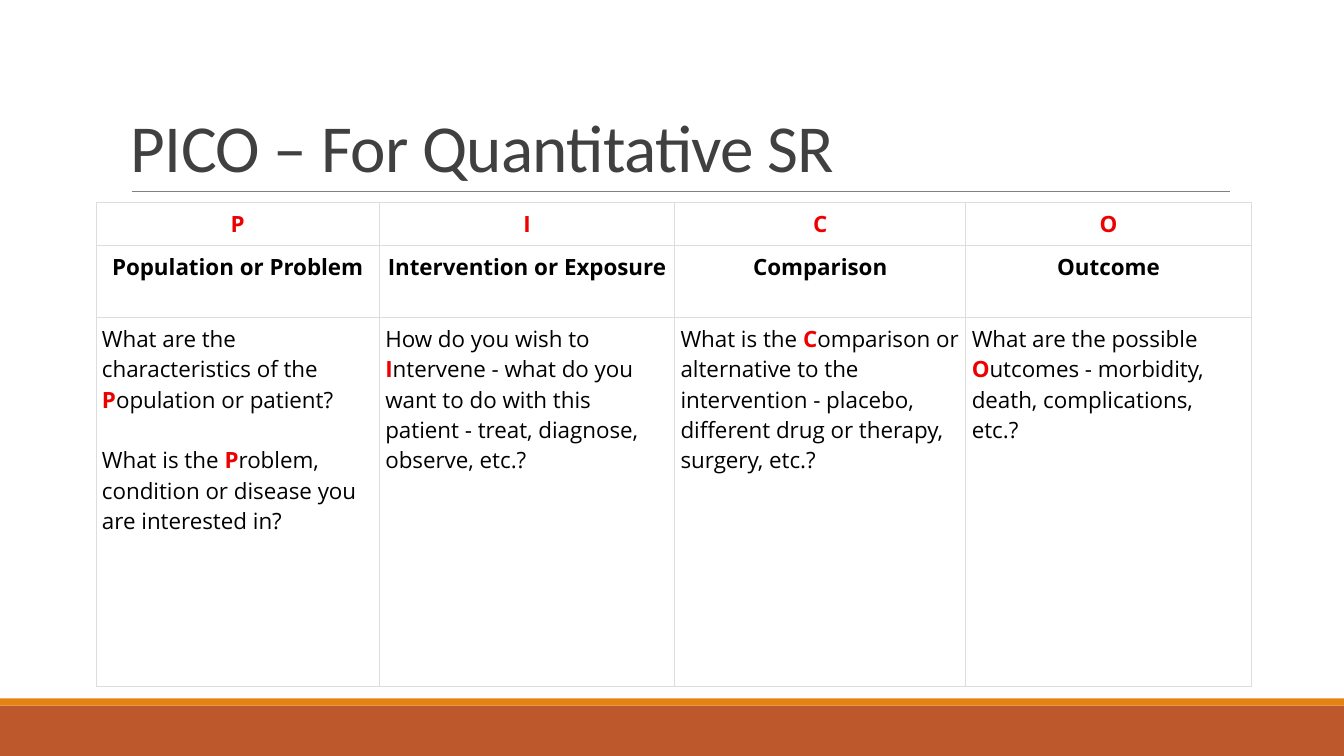
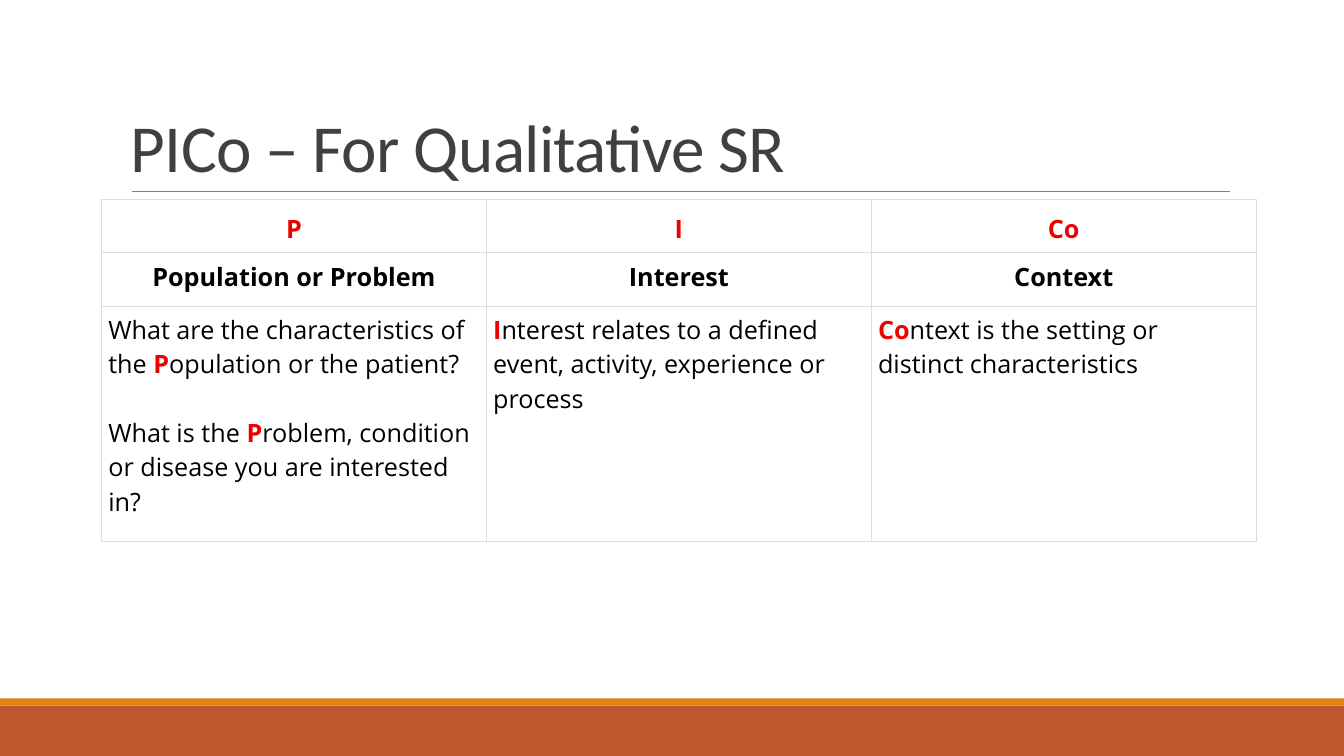
from dataclasses import dataclass
from typing import Optional

import lxml.etree
import pptx
import pptx.dml.color
import pptx.enum.shapes
import pptx.enum.text
import pptx.oxml.ns
import pptx.util

Cm = pptx.util.Cm
Pt = pptx.util.Pt
qn = pptx.oxml.ns.qn
ALIGN = pptx.enum.text.PP_ALIGN
ANCHOR = pptx.enum.text.MSO_ANCHOR

COLORS = {
    "band": "BD582C",
    "stripe": "E48312",
    "rule": "808080",
    "title": "404040",
    "text": "000000",
    "accent": "EE0000",
    "cell": "FFFFFF",
    "border": "DDDDDD",
}
TITLE_FONT = "Calibri"
TABLE_FONT = "Open Sans"
SLIDE_W, SLIDE_H = 33.87, 19.05
LINE_FACTOR = 1.36


@dataclass(frozen=True)
class Column:
    letter: str
    heading: str
    questions: tuple[str, ...]
    width: float


@dataclass(frozen=True)
class Framework:
    title: str
    left: float
    top: float
    rows: tuple[float, float, float]
    size: int
    inset: float
    columns: tuple[Column, ...]


FRAMEWORKS = (
    Framework(
        "PICO – For Quantitative SR", 2.42, 5.11, (1.07, 1.82, 9.3), 16, 0.15,
        (
            Column("P", "Population or Problem", (
                "What are the characteristics of the *P*opulation or patient?",
                "What is the *P*roblem, condition or disease you are interested in?",
            ), 7.14),
            Column("I", "Intervention or Exposure", (
                "How do you wish to* I*ntervene - what do you want to do with this "
                "patient - treat, diagnose, observe, etc.?",
            ), 7.44),
            Column("C", "Comparison", (
                "What is the *C*omparison or alternative to the intervention - "
                "placebo, different drug or therapy, surgery, etc.?",
            ), 7.34),
            Column("O", "Outcome", (
                "What are the possible *O*utcomes - morbidity, death, "
                "complications, etc.?",
            ), 7.19),
        ),
    ),
    Framework(
        "PICo – For Qualitative SR", 2.56, 5.03, (1.34, 1.34, 5.94), 18, 0.17,
        (
            Column("P", "Population or Problem", (
                "What are the characteristics of the *P*opulation or the patient?",
                "What is the *P*roblem, condition or disease you are interested in?",
            ), 9.7),
            Column("I", "Interest", (
                "*I*nterest relates to a defined event, activity, experience or process",
            ), 9.7),
            Column("Co", "Context", (
                "*Co*ntext is the setting or distinct characteristics",
            ), 9.7),
        ),
    ),
)


def rgb(name: str) -> pptx.dml.color.RGBColor:
    return pptx.dml.color.RGBColor.from_string(COLORS[name])


def write(p, text: str, *, font: str, size: int, color: str = "text",
          bold: bool = False, align=ALIGN.LEFT, before: float = 0,
          line_spacing: Optional[float] = None, tracking: int = 0) -> None:
    p.alignment = align
    p.space_before = Pt(before)
    if line_spacing:
        p.line_spacing = line_spacing
    for i, part in enumerate(text.split("*")):
        if not part:
            continue
        accented = i % 2 == 1
        r = p.add_run()
        r.text = part
        r.font.name = font
        r.font.size = Pt(size)
        r.font.bold = bold or accented
        r.font.color.rgb = rgb("accent" if accented else color)
        if tracking:
            r.font._element.set("spc", str(tracking))


def add_band(s, top: float, height: float, color: str) -> None:
    sp = s.shapes.add_shape(pptx.enum.shapes.MSO_SHAPE.RECTANGLE,
                            Cm(0), Cm(top), Cm(SLIDE_W), Cm(height))
    sp.shadow.inherit = False
    sp.fill.solid()
    sp.fill.fore_color.rgb = rgb(color)
    sp.line.fill.background()


def add_frame(s, title: str) -> None:
    add_band(s, 17.78, 1.27, "band")
    add_band(s, 17.6, 0.18, "stripe")
    rule = s.shapes.add_connector(pptx.enum.shapes.MSO_CONNECTOR.STRAIGHT,
                                  Cm(3.32), Cm(4.83), Cm(31), Cm(4.83))
    rule.line.color.rgb = rgb("rule")
    rule.line.width = Pt(0.5)
    lxml.etree.SubElement(rule._element.spPr, qn("a:effectLst"))
    tf = s.shapes.add_textbox(Cm(3.05), Cm(0.79), Cm(27.94), Cm(4.04)).text_frame
    tf.word_wrap = True
    tf.vertical_anchor = ANCHOR.BOTTOM
    write(tf.paragraphs[0], title, font=TITLE_FONT, size=48, color="title",
          line_spacing=0.85, tracking=-50)


def style_cell(cell, inset: float, anchor) -> None:
    cell.margin_left = cell.margin_right = Cm(inset)
    cell.margin_top = cell.margin_bottom = Cm(inset)
    cell.vertical_anchor = anchor
    tc_pr = cell._tc.get_or_add_tcPr()
    for side in ("a:lnL", "a:lnR", "a:lnT", "a:lnB"):
        ln = lxml.etree.SubElement(tc_pr, qn(side), w=str(int(Pt(0.6))))
        fill = lxml.etree.SubElement(ln, qn("a:solidFill"))
        lxml.etree.SubElement(fill, qn("a:srgbClr"), val=COLORS["border"])
    cell.fill.solid()
    cell.fill.fore_color.rgb = rgb("cell")


def add_framework_table(s, fw: Framework) -> None:
    width = sum(c.width for c in fw.columns)
    table = s.shapes.add_table(len(fw.rows), len(fw.columns), Cm(fw.left),
                               Cm(fw.top), Cm(width), Cm(sum(fw.rows))).table
    table.first_row = table.horz_banding = False
    for row, height in zip(table.rows, fw.rows):
        row.height = Cm(height)
    for j, column in enumerate(fw.columns):
        table.columns[j].width = Cm(column.width)
        letter, heading, body = (table.cell(i, j) for i in range(3))
        style_cell(letter, fw.inset, ANCHOR.BOTTOM)
        style_cell(heading, fw.inset, ANCHOR.TOP)
        style_cell(body, fw.inset, ANCHOR.TOP)
        for cell, text, color in ((letter, column.letter, "accent"),
                                  (heading, column.heading, "text")):
            write(cell.text_frame.paragraphs[0], text, font=TABLE_FONT,
                  size=fw.size, color=color, bold=True, align=ALIGN.CENTER)
        tf = body.text_frame
        for k, question in enumerate(column.questions):
            p = tf.add_paragraph() if k else tf.paragraphs[0]
            write(p, question, font=TABLE_FONT, size=fw.size,
                  before=round(fw.size * LINE_FACTOR, 1) if k else 0)


def main() -> None:
    prs = pptx.Presentation()
    prs.slide_width, prs.slide_height = Cm(SLIDE_W), Cm(SLIDE_H)
    for fw in FRAMEWORKS:
        s = prs.slides.add_slide(prs.slide_layouts[6])
        add_frame(s, fw.title)
        add_framework_table(s, fw)
    prs.save("out.pptx")


if __name__ == "__main__":
    main()
